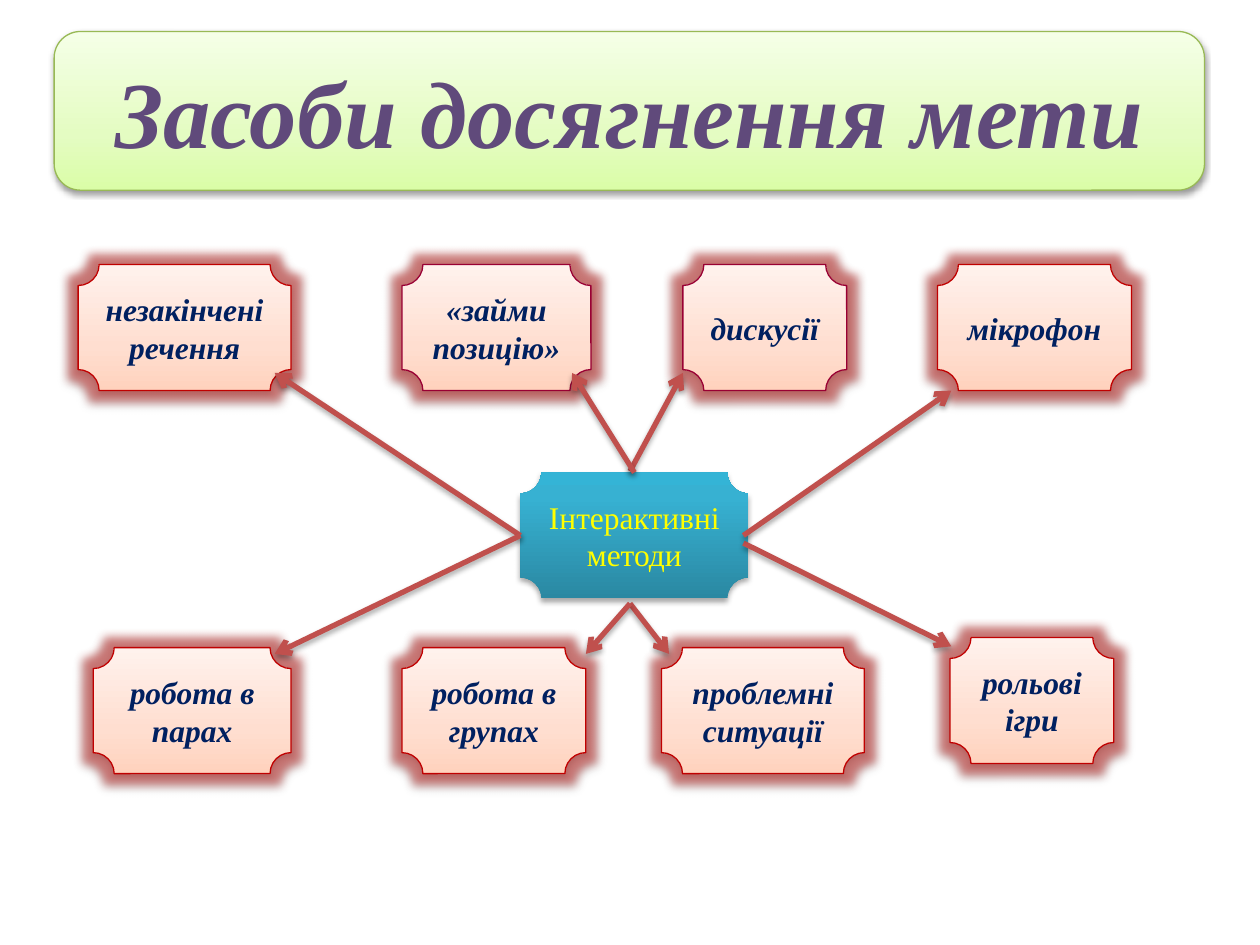
from copy import deepcopy

from lxml import etree
from pptx import Presentation
from pptx.dml.color import RGBColor
from pptx.enum.shapes import MSO_CONNECTOR, MSO_SHAPE
from pptx.enum.text import MSO_ANCHOR, PP_ALIGN
from pptx.oxml.ns import qn
from pptx.util import Inches, Pt

ROUND = MSO_SHAPE.ROUNDED_RECTANGLE
PLAQUE = MSO_SHAPE.PLAQUE
STRAIGHT = MSO_CONNECTOR.STRAIGHT
MIDDLE = MSO_ANCHOR.MIDDLE
CENTER = PP_ALIGN.CENTER
TOP, LEFT = 0, 1

RED, WINE = "C00000", "990033"
GREEN = [(0, "DAFDA7"), (0.35, "E4FCC2"), (1, "F5FFE7")]
PEACH = [(0, "FFD2BD"), (0.35, "FFDED0"), (1, "FFF2ED")]
TEAL = [(0, "2A88A2"), (0.8, "37B1D2"), (1, "34B4D6")]

METHODS = [
    ("незакінчені речення", 0.62, 2.1, 1.69, RED),
    ("робота в парах", 0.74, 5.14, 1.57, RED),
    ("«займи позицію»", 3.19, 2.1, 1.5, WINE),
    ("робота в групах", 3.19, 5.14, 1.46, RED),
    ("дискусії", 5.42, 2.1, 1.3, WINE),
    ("проблемні ситуації", 5.25, 5.14, 1.61, RED),
    ("мікрофон", 7.44, 2.1, 1.54, RED),
    ("рольові ігри", 7.54, 5.06, 1.3, RED),
]
ARROWS = [
    ((5.9, 4.31), (7.55, 5.13), None),
    ((5.9, 4.25), (7.55, 3.1), None),
    ((5, 3.74), (5.42, 2.96), None),
    ((5.03, 3.75), (4.54, 2.96), TOP),
    ((5, 4.79), (5.31, 5.19), None),
    ((5, 4.79), (4.65, 5.19), None),
    ((4.13, 4.25), (2.18, 2.96), LEFT),
    ((4.13, 4.25), (2.18, 5.19), LEFT),
]


def color(code):
    return RGBColor.from_string(code)


class Board:
    """Holds the style and the current slide, and draws each kind of element."""

    font = "Times New Roman"
    arrow_color = "C0504D"
    glow_color = "C8403D"

    def __init__(self, slide):
        self.slide = slide

    def effect(self, group, kind, code, alpha, **attrs):
        node = etree.SubElement(group, qn(f"a:{kind}"), attrs)
        tint = etree.SubElement(node, qn("a:srgbClr"), val=code)
        etree.SubElement(tint, qn("a:alpha"), val=str(alpha * 1000))

    def shade(self, props, alpha, drop, glow=False):
        group = etree.SubElement(props, qn("a:effectLst"))
        if glow:
            self.effect(group, "glow", self.glow_color, 60, rad=str(Pt(11)))
        self.effect(group, "outerShdw", "000000", alpha, blurRad="40000",
                    dist=str(drop), dir="5400000", rotWithShape="0")

    def blend(self, shape, stops):
        fill = shape.fill
        fill.gradient()
        fill.gradient_angle = 90
        group = shape._element.spPr.find(f".//{qn('a:gsLst')}")
        group.insert(1, deepcopy(group[0]))
        for stop, (place, code) in zip(fill.gradient_stops, stops):
            stop.position = place
            stop.color.rgb = color(code)

    def box(self, kind, text, place, stops, ink, size=18, edge=None,
            bold=True, glow=False):
        shape = self.slide.shapes.add_shape(kind, *map(Inches, place))
        self.blend(shape, stops)
        if edge:
            shape.line.color.rgb = color(edge)
            shape.line.width = Pt(0.75)
            self.shade(shape._element.spPr, 38, 20000, glow)
        else:
            shape.line.fill.background()
            self.shade(shape._element.spPr, 35, 23000)
        frame = shape.text_frame
        frame.word_wrap = True
        frame.vertical_anchor = MIDDLE
        para = frame.paragraphs[0]
        para.text = text
        para.alignment = CENTER
        font = para.font
        font.name, font.size = self.font, Pt(size)
        font.bold = font.italic = bold
        font.color.rgb = color(ink)
        return shape

    def arrow(self, start, end, hub, side):
        link = self.slide.shapes.add_connector(
            STRAIGHT, *map(Inches, start + end))
        if side is not None:
            link.begin_connect(hub, side)
        link.line.color.rgb = color(self.arrow_color)
        link.line.width = Pt(3)
        props = link._element.spPr
        etree.SubElement(props.find(qn("a:ln")), qn("a:tailEnd"), type="arrow")
        self.shade(props, 35, 23000)


def main():
    deck = Presentation()
    deck.slide_width, deck.slide_height = Inches(10), Inches(7.5)
    board = Board(deck.slides.add_slide(deck.slide_layouts[6]))
    board.box(ROUND, "Засоби досягнення мети", (0.43, 0.25, 9.13, 1.26),
              GREEN, "604A7B", size=54, edge="98B955")
    for text, left, top, width, edge in METHODS:
        board.box(PLAQUE, text, (left, top, width, 1), PEACH, "002060",
                  edge=edge, glow=True)
    hub = board.box(PLAQUE, "Інтерактивні\vметоди", (4.13, 3.75, 1.81, 1),
                    TEAL, "FFFF00", bold=False)
    for start, end, side in ARROWS:
        board.arrow(start, end, hub, side)
    deck.save("out.pptx")


if __name__ == "__main__":
    main()
